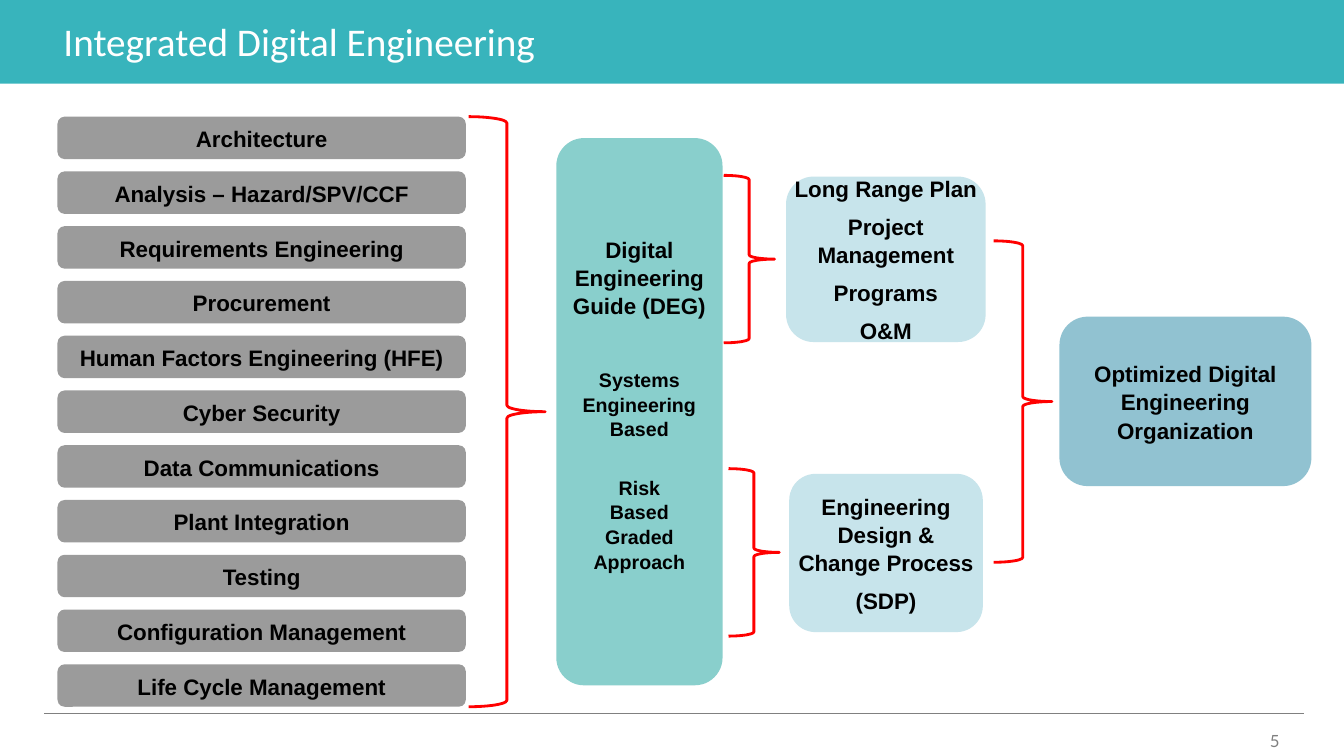
import pptx
import pptx.util
import pptx.dml.color
import pptx.enum.shapes
import pptx.enum.text
import pptx.oxml.ns
from lxml import etree

Cm, Pt = pptx.util.Cm, pptx.util.Pt
SHAPE = pptx.enum.shapes.MSO_SHAPE
ALIGN = pptx.enum.text.PP_ALIGN
ANCHOR = pptx.enum.text.MSO_ANCHOR
qn = pptx.oxml.ns.qn

COLORS = {
    "header": "38B4BC", "title": "FFFFFF", "text": "000000", "rule": "808080",
    "discipline": "9B9B9B", "guide": "6CC3C0", "output": "C7E4EB",
    "organization": "007396", "brace": "FF0000",
}
DISCIPLINES = [
    "Architecture", "Analysis – Hazard/SPV/CCF", "Requirements Engineering",
    "Procurement", "Human Factors Engineering (HFE)", "Cyber Security",
    "Data Communications", "Plant Integration", "Testing",
    "Configuration Management", "Life Cycle Management",
]
# Paragraphs: text, size, space before
GUIDE = [
    ("Digital\nEngineering\nGuide (DEG)", 16, 0),
    ("Systems\nEngineering\nBased", 14, 34),
    ("Risk\nBased", 14, 24), ("Graded", 14, 0), ("Approach", 14, 0),
]
PLAN = [
    ("Long Range Plan", 16, 0), ("Project\nManagement", 16, 7),
    ("Programs", 16, 7), ("O&M", 16, 7),
]
CHANGE = [
    ("Engineering", 16, 0), ("Design &", 16, 0),
    ("Change Process", 16, 0), ("(SDP)", 16, 7),
]
ORGANIZATION = [("Optimized Digital", 16, 0), ("Engineering\nOrganization", 16, 0)]


def rgb(name):
    return pptx.dml.color.RGBColor.from_string(COLORS[name])


def set_font(p, name, size, color, bold=False):
    p.font.name, p.font.size, p.font.bold = name, Pt(size), bold
    p.font.color.rgb = rgb(color)


def add_box(sl, kind, x, y, w, h, color, alpha=100):
    sp = sl.shapes.add_shape(kind, Cm(x), Cm(y), Cm(w), Cm(h))
    sp.shadow.inherit = False
    sp.fill.solid()
    sp.fill.fore_color.rgb = rgb(color)
    sp.line.fill.background()
    if alpha < 100:
        clr = sp.fill._xPr.find(qn("a:solidFill"))[0]
        etree.SubElement(clr, qn("a:alpha"), val=str(alpha * 1000))
    return sp


def add_label(sl, x, y, w, h, color, paragraphs, alpha=100, bottom=0):
    sp = add_box(sl, SHAPE.ROUNDED_RECTANGLE, x, y, w, h, color, alpha)
    tf = sp.text_frame
    tf.word_wrap = False
    tf.vertical_anchor = ANCHOR.MIDDLE
    tf.margin_left = tf.margin_right = tf.margin_top = 0
    tf.margin_bottom = Cm(bottom)
    for i, (text, size, before) in enumerate(paragraphs):
        p = tf.add_paragraph() if i else tf.paragraphs[0]
        p.text = text
        p.alignment = ALIGN.CENTER
        p.line_spacing = 1.05
        p.space_before = Pt(before)
        set_font(p, "Arial", size, "text", True)


def add_brace(sl, x, y, w, h):
    sp = sl.shapes.add_shape(SHAPE.RIGHT_BRACE, Cm(x), Cm(y), Cm(w), Cm(h))
    sp.shadow.inherit = False
    sp.fill.background()
    sp.line.color.rgb = rgb("brace")
    sp.line.width = Pt(2)


def add_header(sl, x, y, w, h):
    band = add_box(sl, SHAPE.RECTANGLE, x, y, w, h, "header")
    title = sl.shapes.title
    title._element.addprevious(band._element)  # band behind the title
    title.left, title.top = Cm(x + 1.6), Cm(y + 0.43)
    title.width, title.height = Cm(w - 3.7), Cm(0.91)
    tf = title.text_frame
    tf.margin_left = tf.margin_right = tf.margin_top = tf.margin_bottom = 0
    tf.word_wrap = False
    tf.auto_size = pptx.enum.text.MSO_AUTO_SIZE.NONE
    tf.vertical_anchor = ANCHOR.TOP
    p = tf.paragraphs[0]
    p.text = "Integrated Digital Engineering"
    p.alignment = ALIGN.LEFT
    set_font(p, "Calibri", 28, "title")


def add_disciplines(sl, x, y, w, h):
    bar_w, bar_h = 10.29, 1.07
    pitch = (h - bar_h) / (len(DISCIPLINES) - 1)
    for i, name in enumerate(DISCIPLINES):
        add_label(sl, x, y + i * pitch, bar_w, bar_h, "discipline", [(name, 16, 0)])
    add_brace(sl, x + w - 1.93, y, 1.93, h)


def add_guide(sl, x, y, w, h):
    add_label(sl, x, y, 4.19, h, "guide", GUIDE, alpha=80, bottom=0.4)
    for dx, dy in ((4.22, 0.94), (4.34, 8.33)):
        add_brace(sl, x + dx, y + dy, 1.28, 4.22)


def add_outputs(sl, x, y, w, h):
    add_label(sl, x, y, 5.03, 4.17, "output", PLAN)
    add_label(sl, x + 0.08, y + h - 3.99, 4.88, 3.99, "output", CHANGE)
    add_brace(sl, x + w - 1.47, y + 1.62, 1.47, 8.1)


def add_organization(sl, x, y, w, h):
    add_label(sl, x, y, w, h, "organization", ORGANIZATION, alpha=43)


def add_footer(sl, x, y, w, h):
    rule = sl.shapes.add_connector(
        pptx.enum.shapes.MSO_CONNECTOR.STRAIGHT, Cm(x), Cm(y), Cm(x + w), Cm(y))
    rule.line.color.rgb = rgb("rule")
    rule.line.width = Pt(0.25)
    etree.SubElement(rule._element.spPr, qn("a:effectLst"))
    number = sl.shapes.add_textbox(Cm(x + w - 1.12), Cm(y + 0.31), Cm(2.1), Cm(h - 0.31))
    number.text_frame.word_wrap = True
    p = number.text_frame.paragraphs[0]
    p.text = "5"
    set_font(p, "Lato", 12, "rule")


def main():
    prs = pptx.Presentation()
    prs.slide_width, prs.slide_height = Cm(33.87), Cm(19.05)
    sl = prs.slides.add_slide(prs.slide_layouts[5])
    add_header(sl, 0, 0, 33.87, 2.11)
    add_footer(sl, 1.12, 17.98, 31.75, 1.07)
    add_disciplines(sl, 1.45, 2.94, 12.29, 14.87)
    add_guide(sl, 14.02, 3.48, 5.64, 13.79)
    add_outputs(sl, 19.81, 4.45, 6.7, 11.48)
    add_organization(sl, 26.7, 7.98, 6.35, 4.27)
    prs.save("out.pptx")


if __name__ == "__main__":
    main()
